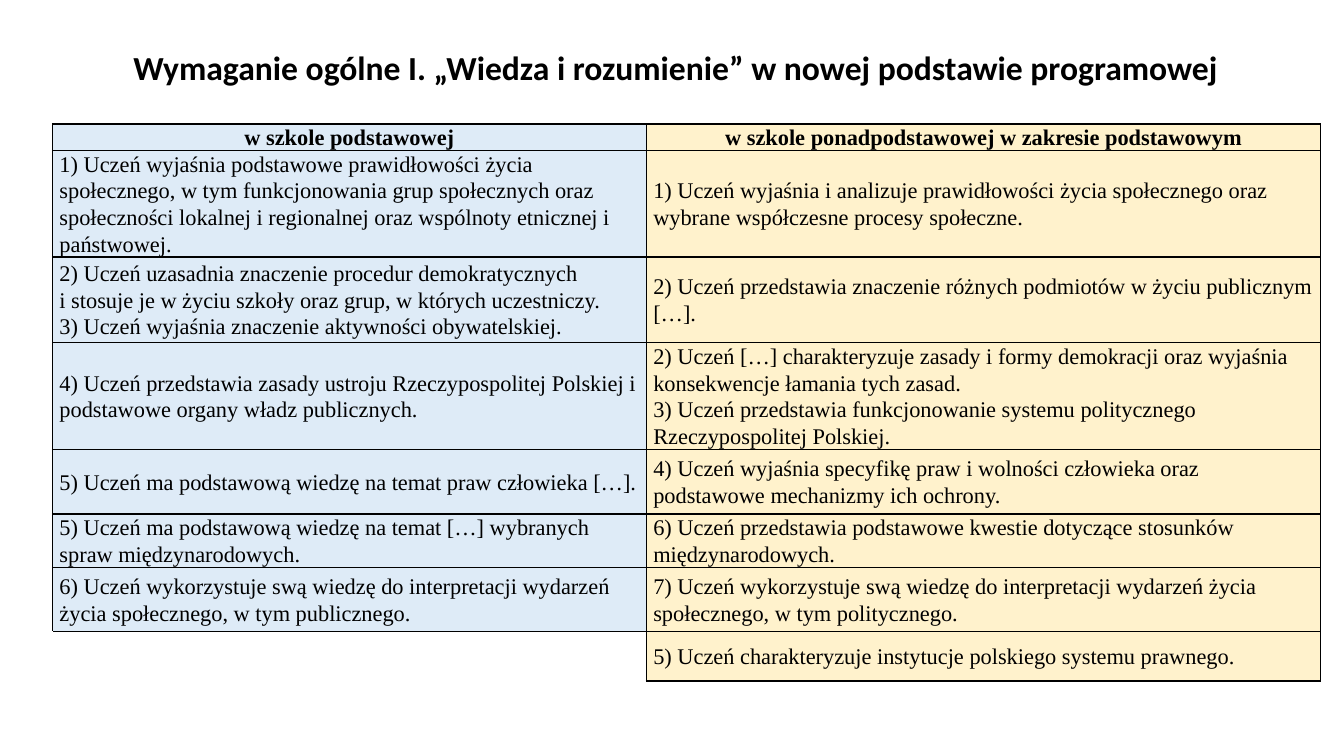
from lxml.etree import SubElement
from pptx import Presentation
from pptx.dml.color import RGBColor
from pptx.enum.text import MSO_ANCHOR, PP_ALIGN
from pptx.oxml.ns import qn
from pptx.util import Inches, Pt

TITLE = "Wymaganie ogólne I. „Wiedza i rozumienie” w nowej podstawie programowej"
COLUMN_WIDTHS = [5.89, 6.69]
COLUMN_FILLS = ["DEEBF7", "FFF2CC"]
ROW_HEIGHTS = [0.23, 0.94, 0.85, 1.06, 0.64, 0.42, 0.64, 0.49]
REQUIREMENTS = [
    ("w szkole podstawowej",
     "w szkole ponadpodstawowej w zakresie podstawowym"),
    ("1) Uczeń wyjaśnia podstawowe prawidłowości życia społecznego, w tym funkcjonowania "
     "grup społecznych oraz społeczności lokalnej i regionalnej oraz wspólnoty etnicznej "
     "i państwowej.",
     "1) Uczeń wyjaśnia i analizuje prawidłowości życia społecznego oraz wybrane "
     "współczesne procesy społeczne."),
    ("2) Uczeń uzasadnia znaczenie procedur demokratycznych\n"
     "i stosuje je w życiu szkoły oraz grup, w których uczestniczy.\n"
     "3) Uczeń wyjaśnia znaczenie aktywności obywatelskiej.",
     "2) Uczeń przedstawia znaczenie różnych podmiotów w życiu publicznym […]."),
    ("4) Uczeń przedstawia zasady ustroju Rzeczypospolitej Polskiej "
     "i podstawowe organy władz publicznych.",
     "2) Uczeń […] charakteryzuje zasady i formy demokracji oraz wyjaśnia konsekwencje "
     "łamania tych zasad.\n"
     "3) Uczeń przedstawia funkcjonowanie systemu politycznego Rzeczypospolitej Polskiej."),
    ("5) Uczeń ma podstawową wiedzę na temat praw człowieka […].",
     "4) Uczeń wyjaśnia specyfikę praw i wolności człowieka oraz podstawowe mechanizmy "
     "ich ochrony."),
    ("5) Uczeń ma podstawową wiedzę na temat […] wybranych spraw międzynarodowych.",
     "6) Uczeń przedstawia podstawowe kwestie dotyczące stosunków międzynarodowych."),
    ("6) Uczeń wykorzystuje swą wiedzę do interpretacji wydarzeń życia społecznego, "
     "w tym publicznego.",
     "7) Uczeń wykorzystuje swą wiedzę do interpretacji wydarzeń życia społecznego, "
     "w tym politycznego."),
    ("", "5) Uczeń charakteryzuje instytucje polskiego systemu prawnego."),
]


def color(value):
    """Return the colour for a hex string."""
    return RGBColor.from_string(value)


def format_text(text_frame, font_name, size, bold, alignment, line_spacing):
    """Format every paragraph and run of a text frame."""
    for paragraph in text_frame.paragraphs:
        paragraph.alignment = alignment
        paragraph.line_spacing = line_spacing
        for run in paragraph.runs:
            run.font.name = font_name
            run.font.size = Pt(size)
            run.font.bold = bold
            run.font.color.rgb = color("000000")


def add_title(slide):
    """Place and format the title placeholder."""
    title = slide.shapes.title
    title.left, title.top = Inches(0.95), Inches(0.08)
    title.width, title.height = Inches(11.5), Inches(1.22)
    title.text_frame.text = TITLE
    title.text_frame.word_wrap = True
    title.text_frame.vertical_anchor = MSO_ANCHOR.MIDDLE
    format_text(title.text_frame, "Calibri", 24, True, PP_ALIGN.CENTER, 0.9)


def set_borders(cell, sides):
    """Draw thin black borders on the given sides, ordered L, R, T, B."""
    properties = cell._tc.get_or_add_tcPr()
    for side in sides:
        line = SubElement(properties, qn(f"a:ln{side}"), w=str(Pt(1)))
        fill = SubElement(line, qn("a:solidFill"))
        SubElement(fill, qn("a:srgbClr"), val="000000")


def fill_cell(cell, text, fill, is_header):
    """Write one requirement cell with its borders and fill."""
    if not text:
        set_borders(cell, "RT")
        cell.fill.background()
        return
    set_borders(cell, "LRTB")
    cell.fill.solid()
    cell.fill.fore_color.rgb = color(fill)
    cell.margin_left = cell.margin_right = Inches(0.07)
    cell.margin_top = cell.margin_bottom = Inches(0)
    cell.vertical_anchor = MSO_ANCHOR.MIDDLE
    cell.text_frame.text = text
    alignment = PP_ALIGN.CENTER if is_header else PP_ALIGN.LEFT
    format_text(cell.text_frame, "Times New Roman", 16, is_header, alignment, 1.07)


def add_requirements_table(slide):
    """Add the table comparing both school levels."""
    table = slide.shapes.add_table(
        len(ROW_HEIGHTS), len(COLUMN_WIDTHS), Inches(0.52), Inches(1.23),
        Inches(sum(COLUMN_WIDTHS)), Inches(sum(ROW_HEIGHTS))).table
    table.first_row = table.horz_banding = False
    for column, width in zip(table.columns, COLUMN_WIDTHS):
        column.width = Inches(width)
    for row_index, (height, texts) in enumerate(zip(ROW_HEIGHTS, REQUIREMENTS)):
        table.rows[row_index].height = Inches(height)
        for column_index, (text, fill) in enumerate(zip(texts, COLUMN_FILLS)):
            fill_cell(table.cell(row_index, column_index), text, fill, row_index == 0)


def main():
    """Build and save the slide."""
    presentation = Presentation()
    presentation.slide_width, presentation.slide_height = Inches(13.33), Inches(7.5)
    slide = presentation.slides.add_slide(presentation.slide_layouts[5])
    add_title(slide)
    add_requirements_table(slide)
    presentation.save("out.pptx")


if __name__ == "__main__":
    main()
